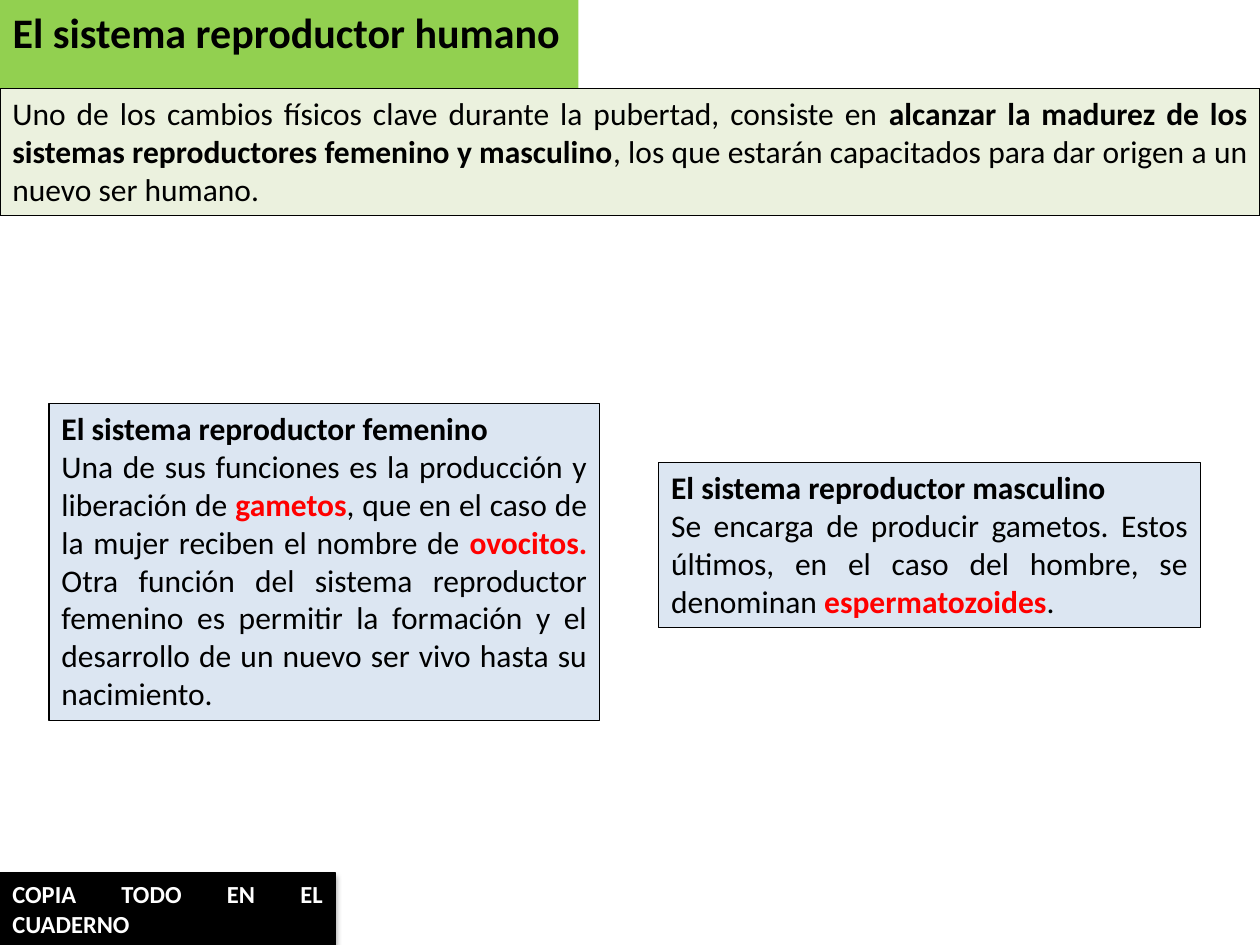
from lxml import etree
from pptx import Presentation
from pptx import util as u
from pptx.dml.color import RGBColor
from pptx.enum import shapes, text
from pptx.oxml.ns import qn

THEME = {
    "font": "Calibri",
    "size": {"title": 24, "body": 18, "note": 14},
    "line": 0.75,
    "green": "92D050", "cream": "EBF1DE", "blue": "DCE6F2",
    "black": "000000", "white": "FFFFFF", "red": "FF0000",
}
WIDE, HIGH = 25.4, 19.05

TITLE = [[("El sistema reproductor humano", "bold")]]
INTRO = [[
    ("Uno de los cambios físicos clave durante la pubertad, consiste en ", "plain"),
    ("alcanzar la madurez de los sistemas reproductores femenino y masculino", "bold"),
    (", los que estarán capacitados para dar origen a un nuevo ser humano.", "plain"),
]]
FEMALE = [
    [("El sistema reproductor femenino", "bold")],
    [
        ("Una de sus funciones es la producción y liberación de ", "plain"),
        ("gametos", "key"),
        (", que en el caso de la mujer reciben el nombre de ", "plain"),
        ("ovocitos.", "key"),
        (" Otra función del sistema reproductor femenino es permitir la formación"
         " y el desarrollo de un nuevo ser vivo hasta su nacimiento.", "plain"),
    ],
]
MALE = [
    [("El sistema reproductor masculino", "bold")],
    [
        ("Se encarga de producir gametos. Estos últimos, en el caso del hombre,"
         " se denominan ", "plain"),
        ("espermatozoides", "key"),
        (".", "plain"),
    ],
]
NOTE = [[("COPIA TODO EN EL CUADERNO", "note")]]

STYLES = {
    "plain": (False, "black"),
    "bold": (True, "black"),
    "key": (True, "red"),
    "note": (True, "white"),
}
NOTE_H = 1.45
BOXES = [
    (INTRO, (0, 1.78, WIDE, 2.57), "cream", "body"),
    (FEMALE, (0.99, 8.13, 11.1, 6.4), "blue", "body"),
    (MALE, (13.28, 9.32, 10.92, 3.33), "blue", "body"),
    (NOTE, (0, HIGH - NOTE_H, 6.76, NOTE_H), "black", "note"),
]


def tint(name):
    return RGBColor.from_string(THEME[name])


def place(shape, area):
    shape.left, shape.top, shape.width, shape.height = map(u.Cm, area)


def paint(shape, fill):
    shape.fill.solid()
    shape.fill.fore_color.rgb = tint(fill)


def write(shape, paras, size, align, wrap=True):
    frame = shape.text_frame
    frame.word_wrap = wrap
    frame.auto_size = text.MSO_AUTO_SIZE.SHAPE_TO_FIT_TEXT
    frame.vertical_anchor = text.MSO_ANCHOR.TOP
    for i, runs in enumerate(paras):
        para = frame.add_paragraph() if i else frame.paragraphs[0]
        para.alignment = align
        for words, style in runs:
            run = para.add_run()
            run.text = words
            font = run.font
            font.name = THEME["font"]
            font.size = u.Pt(THEME["size"][size])
            font.bold, hue = STYLES[style]
            font.color.rgb = tint(hue)


def shade(shape):
    shape.shadow.inherit = False
    effects = shape._element.spPr.find(qn("a:effectLst"))
    outer = etree.SubElement(
        effects, qn("a:outerShdw"), blurRad=str(u.Pt(3.1)),
        dist=str(u.Pt(1.8)), dir="5400000", rotWithShape="0")
    color = etree.SubElement(outer, qn("a:srgbClr"), val=THEME["black"])
    etree.SubElement(color, qn("a:alpha"), val="35000")


def main():
    deck = Presentation()
    deck.slide_width, deck.slide_height = u.Cm(WIDE), u.Cm(HIGH)
    slide = deck.slides.add_slide(deck.slide_layouts[5])

    title = slide.shapes.title
    place(title, (0, 0, 11.66, 1.27))
    paint(title, "green")
    write(title, TITLE, "title", text.PP_ALIGN.LEFT, wrap=False)

    for paras, area, fill, size in BOXES:
        box = slide.shapes.add_shape(
            shapes.MSO_SHAPE.RECTANGLE, *map(u.Cm, area))
        paint(box, fill)
        box.line.color.rgb = tint("black")
        box.line.width = u.Pt(THEME["line"])
        box.shadow.inherit = False
        write(box, paras, size, text.PP_ALIGN.JUSTIFY)
        if paras is NOTE:
            shade(box)

    deck.save("out.pptx")


if __name__ == "__main__":
    main()
